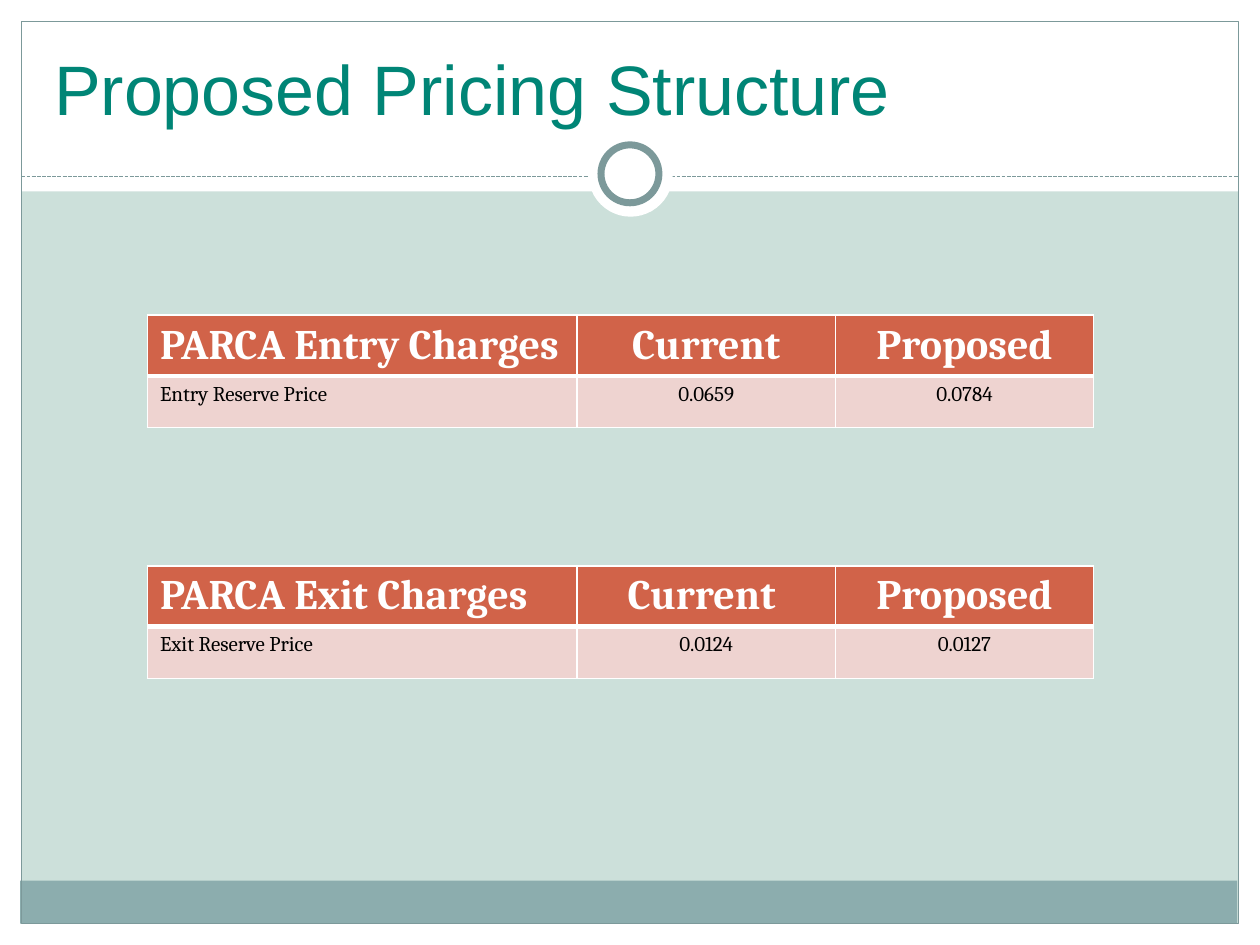
from lxml import etree
from pptx import Presentation
from pptx.dml.color import RGBColor
from pptx.enum.dml import MSO_LINE
from pptx.enum.shapes import MSO_CONNECTOR, MSO_SHAPE
from pptx.enum.text import MSO_ANCHOR, MSO_AUTO_SIZE, PP_ALIGN
from pptx.oxml.ns import qn
from pptx.util import Inches, Pt

RECTANGLE = MSO_SHAPE.RECTANGLE
ELLIPSE = MSO_SHAPE.OVAL
STRAIGHT = MSO_CONNECTOR.STRAIGHT
DASH = MSO_LINE.SQUARE_DOT
BOTTOM = MSO_ANCHOR.BOTTOM
NO_AUTOFIT = MSO_AUTO_SIZE.NONE
LEFT, CENTER = PP_ALIGN.LEFT, PP_ALIGN.CENTER
TITLE_ONLY = 5


def color(value):
    return RGBColor.from_string(value)


class SlideBuilder:
    white = "FFFFFF"
    mint = "CCE0DA"
    teal = "8CADAE"
    frame = "7C999A"
    title_color = "008576"
    header_fill = "D16349"
    body_fill = "EED3D0"
    title_font = "Arial"
    table_font = "Cambria"

    def __init__(self, deck):
        self.page = deck.slides.add_slide(deck.slide_layouts[TITLE_ONLY])
        fill = self.page.background.fill
        fill.solid()
        fill.fore_color.rgb = color(self.mint)

    def shape(self, kind, left, top, width, height, fill=None, line_width=None):
        shape = self.page.shapes.add_shape(
            kind, Inches(left), Inches(top), Inches(width), Inches(height))
        shape.shadow.inherit = False
        if fill:
            shape.fill.solid()
            shape.fill.fore_color.rgb = color(fill)
        else:
            shape.fill.background()
        if line_width:
            shape.line.color.rgb = color(self.frame)
            shape.line.width = Pt(line_width)
        else:
            shape.line.fill.background()

    def dashed_line(self, left, right, y):
        line = self.page.shapes.add_connector(
            STRAIGHT, Inches(left), Inches(y), Inches(right), Inches(y))
        line.line.color.rgb = color(self.frame)
        line.line.width = Pt(0.75)
        line.line.dash_style = DASH
        etree.SubElement(line._element.spPr, qn("a:effectLst"))

    def title(self, text, left, top, width, height):
        title = self.page.shapes.title
        title.left, title.top = Inches(left), Inches(top)
        title.width, title.height = Inches(width), Inches(height)
        self.page.shapes._spTree.append(title._element)
        frame = title.text_frame
        frame.text = text
        frame.auto_size = NO_AUTOFIT
        frame.vertical_anchor = BOTTOM
        para = frame.paragraphs[0]
        para.alignment = LEFT
        para.font.size = Pt(40)
        para.font.name = self.title_font
        para.font.color.rgb = color(self.title_color)

    def borders(self, cell, bottom_width):
        properties = cell._tc.get_or_add_tcPr()
        for side in ("L", "R", "T", "B"):
            width = bottom_width if side == "B" else 1
            line = etree.SubElement(properties, qn(f"a:ln{side}"), w=str(Pt(width)))
            fill = etree.SubElement(line, qn("a:solidFill"))
            etree.SubElement(fill, qn("a:srgbClr"), val=self.white)

    def cell(self, cell, text, is_header, alignment):
        self.borders(cell, 3 if is_header else 1)
        cell.fill.solid()
        cell.fill.fore_color.rgb = color(self.header_fill if is_header else self.body_fill)
        cell.text = text
        para = cell.text_frame.paragraphs[0]
        para.alignment = alignment
        para.font.name = self.table_font
        para.font.size = Pt(24 if is_header else 12)
        para.font.bold = is_header
        para.font.color.rgb = color(self.white if is_header else "000000")

    def table(self, left, top, widths, row_height, rows):
        table = self.page.shapes.add_table(
            len(rows), len(widths), Inches(left), Inches(top),
            Inches(sum(widths)), Inches(row_height * len(rows))).table
        for column, width in zip(table.columns, widths):
            column.width = Inches(width)
        for row_index, values in enumerate(rows):
            table.rows[row_index].height = Inches(row_height)
            for column_index, text in enumerate(values):
                self.cell(table.cell(row_index, column_index), text,
                          row_index == 0, CENTER if column_index else LEFT)


def main():
    deck = Presentation()
    deck.slide_width, deck.slide_height = Inches(10), Inches(7.5)
    slide = SlideBuilder(deck)

    margins = [(0, 7.33, 10, 0.17), (0, 0, 10, 1.52),
               (0, 0, 0.17, 7.5), (9.83, 0, 0.17, 7.5)]
    for margin in margins:
        slide.shape(RECTANGLE, *margin, fill=slide.white)
    slide.shape(RECTANGLE, 0.16, 6.99, 9.66, 0.34, fill=slide.teal)
    slide.shape(RECTANGLE, 0.17, 0.17, 9.66, 7.16, line_width=0.75)
    slide.dashed_line(0.17, 9.83, 1.4)
    slide.shape(ELLIPSE, 4.67, 1.05, 0.67, 0.67, fill=slide.white)
    slide.shape(ELLIPSE, 4.77, 1.15, 0.46, 0.46, fill=slide.white, line_width=4)
    slide.title("Proposed Pricing Structure", 0.33, 0.25, 9.33, 0.83)

    charges = [("Entry", 2.5, "Current", "0.0659", "0.0784"),
               ("Exit", 4.49, "Current ", "0.0124", "0.0127")]
    for name, top, current_label, current, proposed in charges:
        slide.table(1.17, top, (3.41, 2.05, 2.05), 0.41, [
            (f"PARCA {name} Charges", current_label, "Proposed"),
            (f"{name} Reserve Price", current, proposed)])

    deck.save("out.pptx")


if __name__ == "__main__":
    main()
